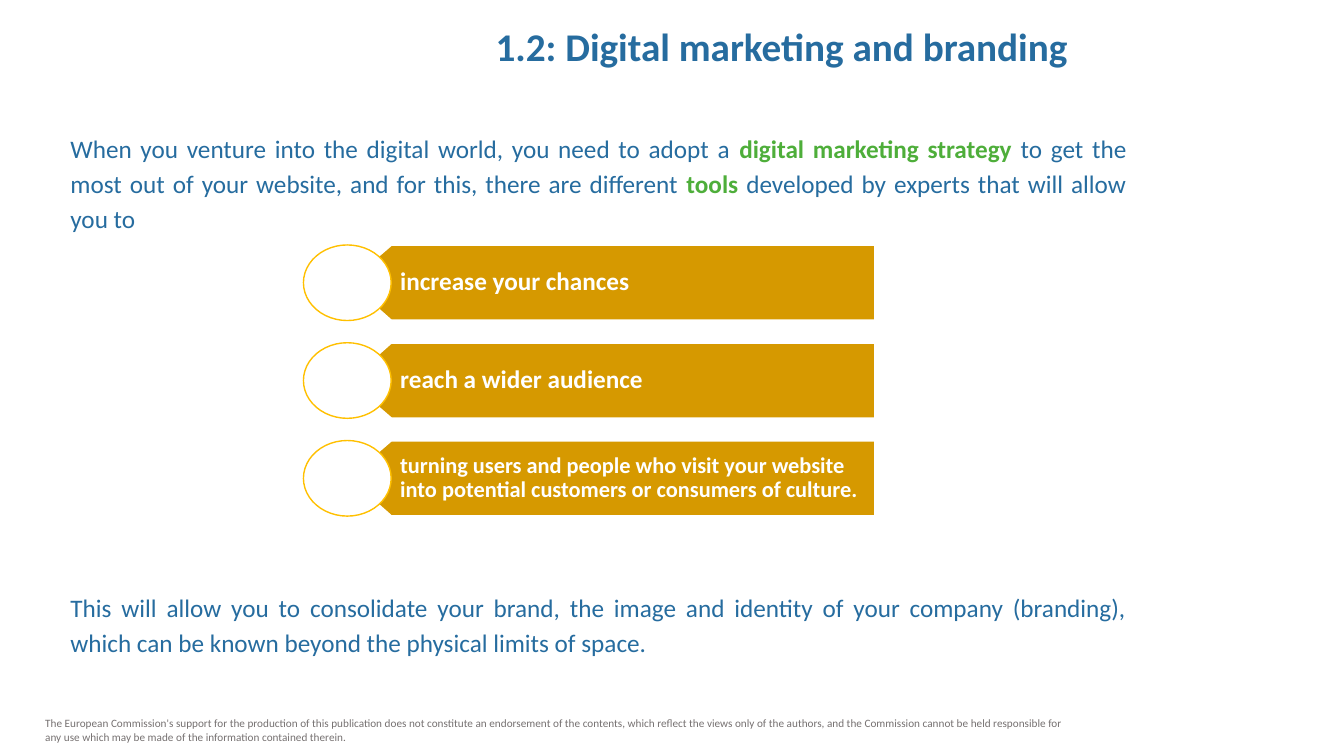
from pptx import Presentation
from pptx.dml.color import RGBColor as Rgb
from pptx.enum.shapes import MSO_SHAPE as Shape
from pptx.enum.text import MSO_ANCHOR as Anchor, MSO_AUTO_SIZE as Fit, PP_ALIGN as Align
from pptx.util import Pt

PX = 9144  # 100 px to the inch
FONT = "Calibri"
HUES = {
    "blue": "266C9F",
    "green": "4EAE3A",
    "gold": "D69900",
    "amber": "FFC000",
    "white": "FFFFFF",
    "gray": "767171",
}
GOALS = [
    ("increase your chances", 18),
    ("reach a wider audience", 18),
    ("turning users and people who visit your website into potential "
     "customers or consumers of culture.", 16),
]
INTRO = [
    ("When you venture into the digital world, you need to adopt a ", False),
    ("digital marketing strategy ", True),
    ("to get the most out of your website, and for this, there are different ", False),
    ("tools", True),
    (" developed by experts that will allow you to", False),
]
CLOSE = [
    ("This will allow you to consolidate your brand, the image and identity of your "
     "company (branding), which can be known beyond the physical limits of space.", False),
]
NOTE = (
    "The European Commission's support for the production of this publication does not "
    "constitute an endorsement of the contents, which reflect the views only of the authors, "
    "and the Commission cannot be held responsible for any use which may be made of the "
    "information contained therein."
)


def hue(name):
    return Rgb.from_string(HUES[name])


def write(shape, runs, size, color="blue", bold=False, align=Align.LEFT,
          anchor=Anchor.TOP, lines=1.0, indent=0, pad=(10, 5, 10, 5)):
    """Fill a shape with one paragraph; marked runs are bold and green."""
    frame = shape.text_frame
    frame.word_wrap = True
    frame.auto_size = Fit.NONE
    frame.vertical_anchor = anchor
    (frame.margin_left, frame.margin_top,
     frame.margin_right, frame.margin_bottom) = [n * PX for n in pad]
    para = frame.paragraphs[0]
    para.alignment = align
    para.line_spacing = lines
    if indent:
        props = para._p.get_or_add_pPr()
        props.set("marL", str(indent * PX))
        props.set("indent", "0")
    for text, marked in runs:
        run = para.add_run()
        run.text = text
        run.font.name = FONT
        run.font.size = Pt(size)
        run.font.bold = bold or marked
        run.font.color.rgb = hue("green" if marked else color)


def box(slide, x, y, w, h, runs, size, **form):
    shape = slide.shapes.add_textbox(x * PX, y * PX, w * PX, h * PX)
    write(shape, runs, size, **form)


def paint(shape, fill, line, width):
    shape.shadow.inherit = False
    shape.fill.solid()
    shape.fill.fore_color.rgb = hue(fill)
    shape.line.color.rgb = hue(line)
    shape.line.width = Pt(width)


def bar(slide, x, y, w, h, text, size):
    """Bar with a point on its left side."""
    neck, right, base = x + 43, x + w, y + h
    path = slide.shapes.build_freeform(right, base, scale=PX)
    path.add_line_segments(
        [(neck, base), (x, y + h / 2), (neck, y), (right, y)], close=True)
    shape = path.convert_to_shape()
    paint(shape, "gold", "white", 1.5)
    write(shape, [(text, False)], size, color="white", bold=True,
          anchor=Anchor.MIDDLE, lines=0.9, pad=(52, 5, 10, 5))


def disc(slide, x, y, w, h):
    shape = slide.shapes.add_shape(Shape.OVAL, x * PX, y * PX, w * PX, h * PX)
    paint(shape, "white", "amber", 1)


def main():
    deck = Presentation()
    deck.slide_width, deck.slide_height = 1333 * PX, 750 * PX
    slide = deck.slides.add_slide(deck.slide_layouts[5])

    # Title
    title = slide.shapes.title
    title.left, title.top, title.width, title.height = [n * PX for n in (243, 2, 1064, 79)]
    write(title, [("1.2: Digital marketing and branding", False)], 28, bold=True,
          align=Align.CENTER, anchor=Anchor.MIDDLE, lines=1.15)

    # Body text above and below the list
    for y, h, runs in [(123, 115, INTRO), (578, 83, CLOSE)]:
        box(slide, 35, y, 1092, h, runs, 18, align=Align.JUSTIFY, lines=1.15, indent=25)

    # List of goals
    for row, (text, size) in enumerate(GOALS):
        y = 243 + row * 97
        bar(slide, 345, y, 523, 75, text, size)
        disc(slide, 301, y, 87, 75)

    # Disclaimer
    box(slide, 35, 706, 1046, 37, [(NOTE, False)], 8, color="gray")

    deck.save("out.pptx")


if __name__ == "__main__":
    main()
